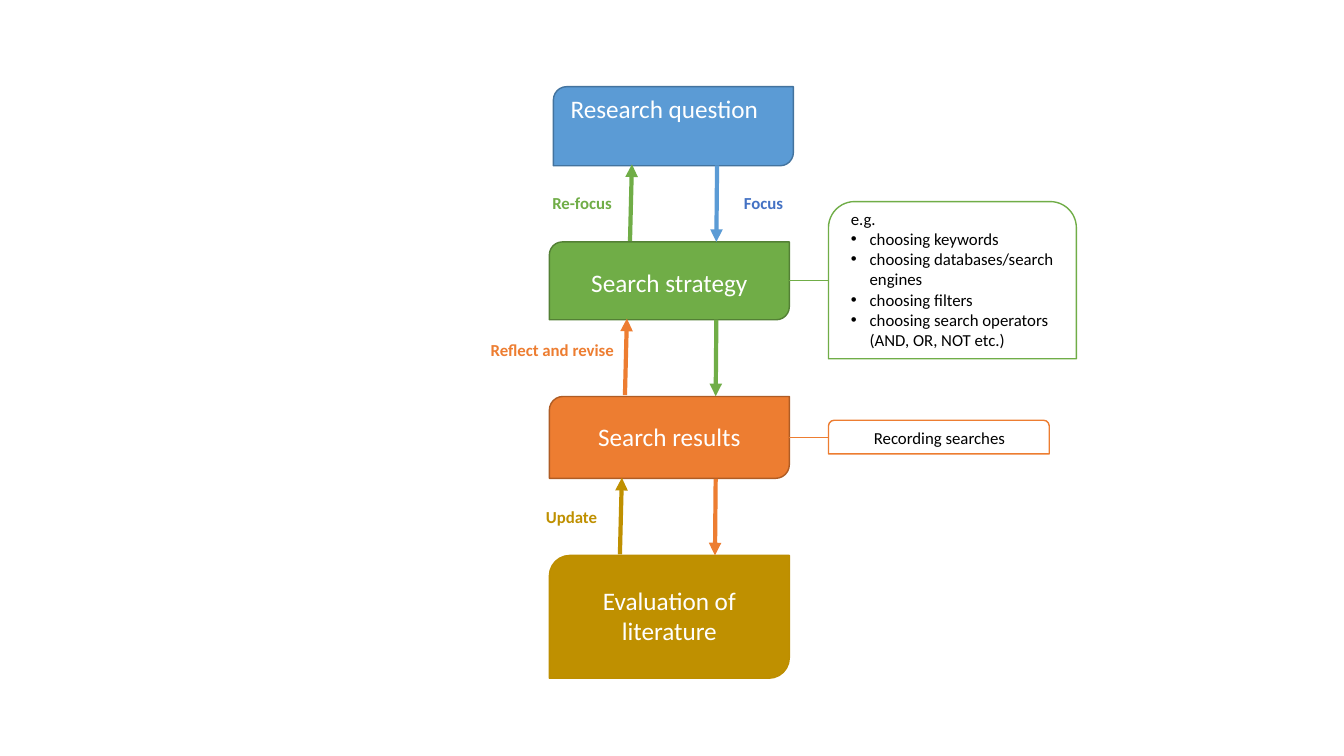
from dataclasses import dataclass

from lxml import etree
from pptx import Presentation
from pptx.dml.color import RGBColor
from pptx.enum import shapes, text
from pptx.oxml import ns
from pptx.util import Pt

FONT = "Calibri"
WHITE = RGBColor(0xFF, 0xFF, 0xFF)
BLACK = RGBColor(0x00, 0x00, 0x00)
BLUE = RGBColor(0x5B, 0x9B, 0xD5)
DARK_BLUE = RGBColor(0x43, 0x73, 0x9E)
FOCUS_BLUE = RGBColor(0x44, 0x72, 0xC4)
GREEN = RGBColor(0x70, 0xAD, 0x47)
DARK_GREEN = RGBColor(0x53, 0x80, 0x35)
ORANGE = RGBColor(0xED, 0x7D, 0x31)
DARK_ORANGE = RGBColor(0xAF, 0x5C, 0x24)
GOLD = RGBColor(0xBF, 0x90, 0x00)
DARK_GOLD = RGBColor(0xBD, 0x8E, 0x00)

STAGE_WIDTH = 171.4
STAGE_TEXT_WIDTH = 149.8
CALLOUT_LEFT = 591.8
STAGE_RIGHT = 563.8
ARROW_RISE = 54.7
BULLET_INDENT = 13.5


@dataclass(frozen=True)
class Box:
    left: float
    top: float
    width: float
    height: float
    fill: RGBColor
    outline: RGBColor
    preset: shapes.MSO_SHAPE = shapes.MSO_SHAPE.ROUND_2_DIAG_RECTANGLE


@dataclass(frozen=True)
class Label:
    wording: str
    left: float
    top: float
    width: float
    height: float
    color: RGBColor
    size: float = 12
    bold: bool = False


@dataclass(frozen=True)
class Line:
    x1: float
    y1: float
    x2: float
    y2: float
    color: RGBColor
    weight: float = 3
    arrow: bool = True


STAGES = [
    Box(395.3, 61.9, STAGE_WIDTH, 56.5, BLUE, DARK_BLUE),
    Box(392.4, 172.8, STAGE_WIDTH, 55.6, GREEN, DARK_GREEN),
    Box(392.4, 283.2, STAGE_WIDTH, 58.5, ORANGE, DARK_ORANGE),
    Box(392.4, 396.7, STAGE_WIDTH, 87.8, GOLD, DARK_GOLD),
]
CALLOUTS = [
    Box(CALLOUT_LEFT, top, width, height, WHITE, outline,
        shapes.MSO_SHAPE.ROUND_2_SAME_RECTANGLE)
    for top, width, height, outline in (
        (300.2, 157.7, 24, ORANGE), (144, 177.1, 112.3, GREEN))
]
STAGE_LABELS = [
    Label(wording, left, top, STAGE_TEXT_WIDTH, height, WHITE, 18)
    for wording, left, top, height in (
        ("Research question", 399.6, 63.4, 29.1),
        ("Search strategy", 403.2, 187.2, 29.1),
        ("Search results", 403.2, 297.4, 29.1),
        ("Evaluation of literature", 403.2, 414.7, 50.9))
]
RECORDING_LABEL = Label("Recording searches", 596.2, 301.7, 149.8, 21.8, BLACK)
LOOP_LABELS = [
    Label(wording, left, top, width, 21.8, color, bold=True)
    for wording, left, top, width, color in (
        ("Focus", 519.1, 133.9, 52.6, FOCUS_BLUE),
        ("Re-focus", 384.5, 133.9, 62.6, GREEN),
        ("Reflect and revise", 342.7, 239, 103.7, ORANGE),
        ("Update", 356.4, 358.6, 103.7, GOLD))
]
# Each gap between stages holds one arrow down and one arrow back up
GAP_TOPS = [118.1, 228.3, 342]
DOWN_ARROWS = [
    Line(512.2 - 0.5 * i, top, 511.7 - 0.5 * i, top + ARROW_RISE, color)
    for i, (top, color) in enumerate(zip(GAP_TOPS, (BLUE, GREEN, ORANGE)))
]
UP_ARROWS = [
    Line(450 - 3.6 * i, top - 0.7 + ARROW_RISE, 451.4 - 3.6 * i, top - 0.7, color)
    for i, (top, color) in enumerate(zip(GAP_TOPS, (GREEN, ORANGE, GOLD)))
]
CALLOUT_LINKS = [
    Line(STAGE_RIGHT, y, CALLOUT_LEFT, y, color, 0.5, False)
    for y, color in ((200.2, GREEN), (312.5, ORANGE))
]
STRATEGY_LIST = [
    "e.g.",
    "choosing keywords",
    "choosing databases/search engines",
    "choosing filters",
    "choosing search operators (AND, OR, NOT etc.)",
]


def style_paragraph(paragraph, size: float, color: RGBColor, bold: bool = False) -> None:
    for run in paragraph.runs:
        run.font.name = FONT
        run.font.size = Pt(size)
        run.font.bold = bold
        run.font.color.rgb = color


def draw_box(slide, box: Box) -> None:
    shape = slide.shapes.add_shape(
        box.preset, Pt(box.left), Pt(box.top), Pt(box.width), Pt(box.height))
    shape.shadow.inherit = False
    shape.fill.solid()
    shape.fill.fore_color.rgb = box.fill
    shape.line.color.rgb = box.outline
    shape.line.width = Pt(1)


def draw_label(slide, label: Label) -> None:
    frame = slide.shapes.add_textbox(
        Pt(label.left), Pt(label.top), Pt(label.width), Pt(label.height)).text_frame
    frame.word_wrap = True
    frame.auto_size = text.MSO_AUTO_SIZE.SHAPE_TO_FIT_TEXT
    frame.text = label.wording
    paragraph = frame.paragraphs[0]
    paragraph.alignment = text.PP_ALIGN.CENTER
    style_paragraph(paragraph, label.size, label.color, label.bold)


def draw_line(slide, line: Line) -> None:
    connector = slide.shapes.add_connector(
        shapes.MSO_CONNECTOR.STRAIGHT,
        Pt(line.x1), Pt(line.y1), Pt(line.x2), Pt(line.y2))
    connector.line.color.rgb = line.color
    connector.line.width = Pt(line.weight)
    if line.arrow:
        etree.SubElement(connector.line._get_or_add_ln(), ns.qn("a:tailEnd"), type="triangle")
    etree.SubElement(connector.element.spPr, ns.qn("a:effectLst"))


def fill_strategy_list(body) -> None:
    body.left, body.top, body.width, body.height = Pt(600.5), Pt(145.4), Pt(167), Pt(108.7)
    frame = body.text_frame
    frame.word_wrap = True
    frame.auto_size = text.MSO_AUTO_SIZE.NONE
    frame.vertical_anchor = text.MSO_ANCHOR.TOP
    frame.text = "\n".join(STRATEGY_LIST)
    for i, paragraph in enumerate(frame.paragraphs):
        paragraph.alignment = text.PP_ALIGN.LEFT
        paragraph.space_before = Pt(0)
        style_paragraph(paragraph, 12, BLACK)
        indent = Pt(BULLET_INDENT) if i else 0
        properties = paragraph._p.get_or_add_pPr()
        properties.set("marL", str(indent))
        properties.set("indent", str(-indent))
        if i:
            etree.SubElement(properties, ns.qn("a:buFont"), typeface="Arial")
            etree.SubElement(properties, ns.qn("a:buChar"), char="•")
        else:
            etree.SubElement(properties, ns.qn("a:buNone"))


def main() -> None:
    presentation = Presentation()
    presentation.slide_width, presentation.slide_height = Pt(960), Pt(540)
    slide = presentation.slides.add_slide(presentation.slide_layouts[1])
    title, strategy_list = slide.placeholders
    title.element.getparent().remove(title.element)

    # Stages and callouts
    for box in STAGES + CALLOUTS:
        draw_box(slide, box)
    for label in STAGE_LABELS + [RECORDING_LABEL]:
        draw_label(slide, label)

    # Strategy list, brought in front of its callout
    fill_strategy_list(strategy_list)
    strategy_list.element.getparent().append(strategy_list.element)

    # Arrows, links and loop labels
    for line in DOWN_ARROWS + UP_ARROWS + CALLOUT_LINKS:
        draw_line(slide, line)
    for label in LOOP_LABELS:
        draw_label(slide, label)

    presentation.save("out.pptx")


if __name__ == "__main__":
    main()
